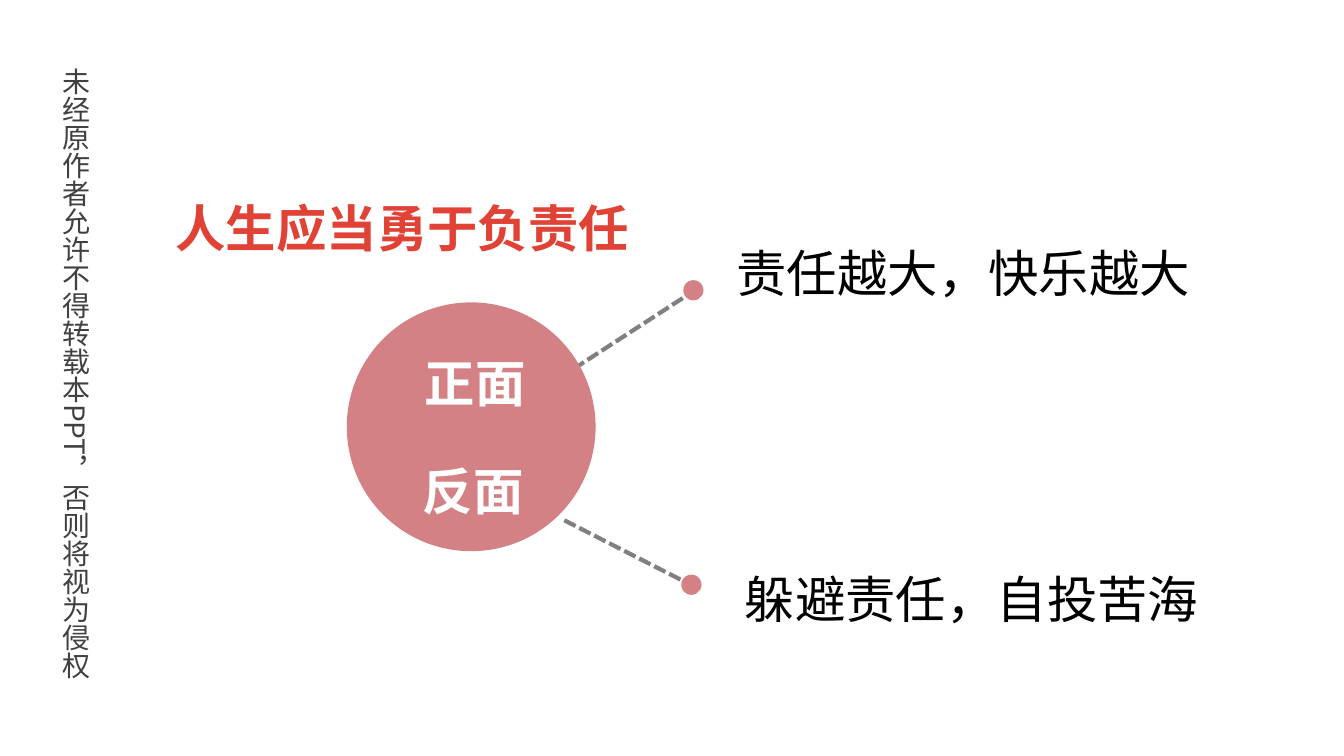
from lxml import etree
from pptx import Presentation
from pptx import util as u
from pptx.dml.color import RGBColor
from pptx.enum import dml, shapes, text
from pptx.oxml.ns import qn

FONT = "Noto Sans CJK SC"
RED, ROSE, GREY, DARK = "E04236", "D48185", "808080", "404040"
BLACK, WHITE = "000000", "FFFFFF"


def color(value):
    return RGBColor.from_string(value)


def write(shape, words, size=36, fill=BLACK, bold=False,
          align=text.PP_ALIGN.LEFT, spacing=1.0, vertical=False):
    frame = shape.text_frame
    frame.word_wrap = True
    frame.auto_size = text.MSO_AUTO_SIZE.NONE
    frame.vertical_anchor = text.MSO_ANCHOR.TOP
    if vertical:
        frame._txBody.bodyPr.set("vert", "eaVert")
    paragraph = frame.paragraphs[0]
    paragraph.alignment = align
    paragraph.line_spacing = spacing
    run = paragraph.add_run()
    run.text = words
    run.font.name = FONT
    run.font.size = u.Pt(size)
    run.font.bold = bold
    run.font.color.rgb = color(fill)
    east_asian = etree.SubElement(run._r.get_or_add_rPr(), qn("a:ea"))
    east_asian.set("typeface", FONT)


class Deck:
    def __init__(self, width, height):
        self.presentation = Presentation()
        self.presentation.slide_width = u.Cm(width)
        self.presentation.slide_height = u.Cm(height)
        self.slide = self.presentation.slides.add_slide(
            self.presentation.slide_layouts[5])

    def title(self, words, left, top, width, height, **style):
        shape = self.slide.shapes.title
        shape.left, shape.top = u.Cm(left), u.Cm(top)
        shape.width, shape.height = u.Cm(width), u.Cm(height)
        write(shape, words, **style)

    def label(self, words, left, top, width, height, **style):
        shape = self.slide.shapes.add_textbox(
            u.Cm(left), u.Cm(top), u.Cm(width), u.Cm(height))
        write(shape, words, **style)

    def circle(self, left, top, diameter):
        shape = self.slide.shapes.add_shape(
            shapes.MSO_SHAPE.OVAL, u.Cm(left), u.Cm(top),
            u.Cm(diameter), u.Cm(diameter))
        shape.shadow.inherit = False
        shape.fill.solid()
        shape.fill.fore_color.rgb = color(ROSE)
        shape.line.fill.background()

    def dashed_line(self, start, end):
        line = self.slide.shapes.add_connector(
            shapes.MSO_CONNECTOR.STRAIGHT,
            *(u.Cm(value) for value in (*start, *end)))
        line.line.color.rgb = color(GREY)
        line.line.width = u.Pt(3)
        line.line.dash_style = dml.MSO_LINE.SQUARE_DOT
        etree.SubElement(line._element.spPr, qn("a:effectLst"))


def main():
    deck = Deck(33.87, 19.05)
    deck.title("人生应当勇于负责任", 4.17, 4.83, 15.34, 1.8, fill=RED, bold=True)
    deck.label("未经原作者允许不得转载本PPT，否则将视为侵权", 1.07, 1.45, 1.8, 17.5,
               size=20, fill=DARK, spacing=1.5, vertical=True)

    branches = [
        ("责任越大，快乐越大", (18.31, 5.21), (14.45, 9.3), (17.27, 7.47), (17.22, 7.06)),
        ("躲避责任，自投苦海", (18.52, 13.44), (14.22, 13.11), (17.2, 14.63), (17.17, 14.48)),
    ]
    for words, place, start, end, dot in branches:
        deck.label(words, *place, 13, 2.57, spacing=1.5)
        deck.dashed_line(start, end)
        deck.circle(*dot, 0.51)

    deck.circle(8.74, 7.62, 6.27)
    for words, left, top in [("正面", 9.45, 8.76), ("反面", 9.4, 11.46)]:
        deck.label(words, left, top, 5.05, 1.8, fill=WHITE, bold=True,
                   align=text.PP_ALIGN.CENTER)

    deck.presentation.save("out.pptx")


if __name__ == "__main__":
    main()
